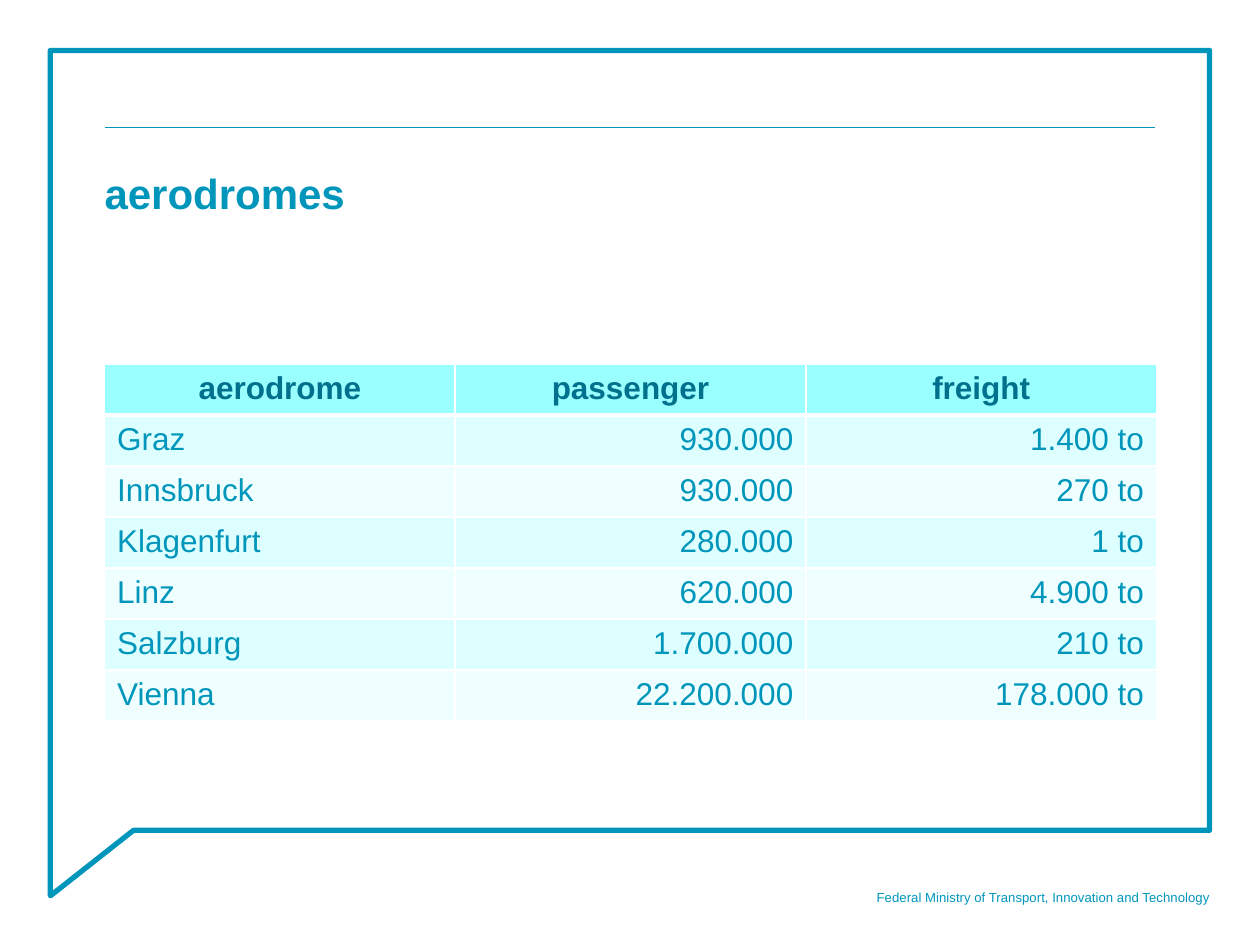
from lxml.etree import SubElement
from pptx import Presentation
from pptx.dml.color import RGBColor
from pptx.enum.shapes import MSO_CONNECTOR
from pptx.enum.text import MSO_ANCHOR, PP_ALIGN
from pptx.oxml.ns import qn
from pptx.util import Inches, Pt

# Content
TITLE = "aerodromes"
FOOTER = "Federal Ministry of Transport, Innovation and Technology"
HEADER = ("aerodrome", "passenger", "freight")
AERODROMES = [
    ("Graz", "930.000", "1.400 to"),
    ("Innsbruck", "930.000", "270 to"),
    ("Klagenfurt", "280.000", "1 to"),
    ("Linz", "620.000", "4.900 to"),
    ("Salzburg", "1.700.000", "210 to"),
    ("Vienna", "22.200.000", "178.000 to"),
]

# Format
COLORS = {"accent": "0096BB", "header_text": "00708C", "header": "99FFFF",
          "odd": "DEFFFF", "even": "EFFFFF", "border": "FFFFFF"}
TITLE_FONT = {"name": "Arial", "size": Pt(24), "bold": True}
FOOTER_FONT = {"name": "Arial", "size": Pt(7.5), "bold": False}
HEADER_FONT = {"name": "Arial", "size": Pt(18), "bold": True}
BODY_FONT = {**HEADER_FONT, "bold": False}
FRAME = [(0.4, 0.4), (9.6, 0.4), (9.6, 6.59), (1.06, 6.59), (0.4, 7.11)]
LEFT, WIDTH, ROW_HEIGHT = 0.83, 8.35, 0.405


def rgb(key):
    return RGBColor.from_string(COLORS[key])


def write(text_frame, text, font, color, align=PP_ALIGN.LEFT):
    paragraph = text_frame.paragraphs[0]
    paragraph.alignment = align
    run = paragraph.add_run()
    run.text = text
    for key, value in font.items():
        setattr(run.font, key, value)
    run.font.color.rgb = rgb(color)
    return paragraph


def set_frame(text_frame, top=0):
    values = {"margin_left": 0, "margin_top": Inches(top), "margin_right": 0,
              "margin_bottom": 0, "word_wrap": True,
              "vertical_anchor": MSO_ANCHOR.TOP}
    for key, value in values.items():
        setattr(text_frame, key, value)


def set_borders(cell, bottom, top):
    properties = cell._tc.get_or_add_tcPr()
    widths = {"a:lnL": 1, "a:lnR": 1, "a:lnT": top, "a:lnB": bottom}
    for position, (tag, width) in enumerate(widths.items()):
        line = SubElement(properties, qn(tag), w=str(Pt(width)))
        fill = SubElement(line, qn("a:solidFill"))
        SubElement(fill, qn("a:srgbClr"), val=COLORS["border"])
        properties.insert(position, line)


prs = Presentation()
prs.slide_width, prs.slide_height = Inches(10), Inches(7.5)
slide = prs.slides.add_slide(prs.slide_layouts[5])
shapes = slide.shapes

# Speech-bubble frame
points = [(Inches(x), Inches(y)) for x, y in FRAME]
builder = shapes.build_freeform(*points[0])
builder.add_line_segments(points[1:], close=True)
bubble = builder.convert_to_shape()
bubble.shadow.inherit = False
bubble.fill.background()
bubble.line.color.rgb = rgb("accent")
bubble.line.width = Pt(3)

# Rule above the title
rule = shapes.add_connector(MSO_CONNECTOR.STRAIGHT, Inches(LEFT), Inches(1.01),
                            Inches(9.17), Inches(1.01))
rule.line.color.rgb = rgb("accent")
rule.line.width = Pt(0.6)
SubElement(rule._element.spPr, qn("a:effectLst"))

# Footer
footer = shapes.add_textbox(Inches(6.43), Inches(7.06), Inches(3.17), Inches(0.16))
set_frame(footer.text_frame)
write(footer.text_frame, FOOTER, FOOTER_FONT, "accent", PP_ALIGN.RIGHT)

# Title
title = shapes.title
title.left, title.top = Inches(LEFT), Inches(1.23)
title.width, title.height = Inches(WIDTH), Inches(1.02)
set_frame(title.text_frame, top=0.02)
write(title.text_frame, TITLE, TITLE_FONT, "accent").line_spacing = 1.2

# Table
rows = [HEADER, *AERODROMES]
table = shapes.add_table(len(rows), len(HEADER), Inches(LEFT), Inches(2.89),
                         Inches(WIDTH), Inches(ROW_HEIGHT * len(rows))).table
for r, row in enumerate(rows):
    is_header = r == 0
    band = "header" if is_header else "odd" if r % 2 else "even"
    font = HEADER_FONT if is_header else BODY_FONT
    color = "header_text" if is_header else "accent"
    for c, text in enumerate(row):
        cell = table.cell(r, c)
        cell.fill.solid()
        cell.fill.fore_color.rgb = rgb(band)
        set_borders(cell, bottom=3 if is_header else 1, top=3 if r == 1 else 1)
        align = (PP_ALIGN.CENTER if is_header
                 else PP_ALIGN.RIGHT if c else PP_ALIGN.LEFT)
        write(cell.text_frame, text, font, color, align)

prs.save("out.pptx")
